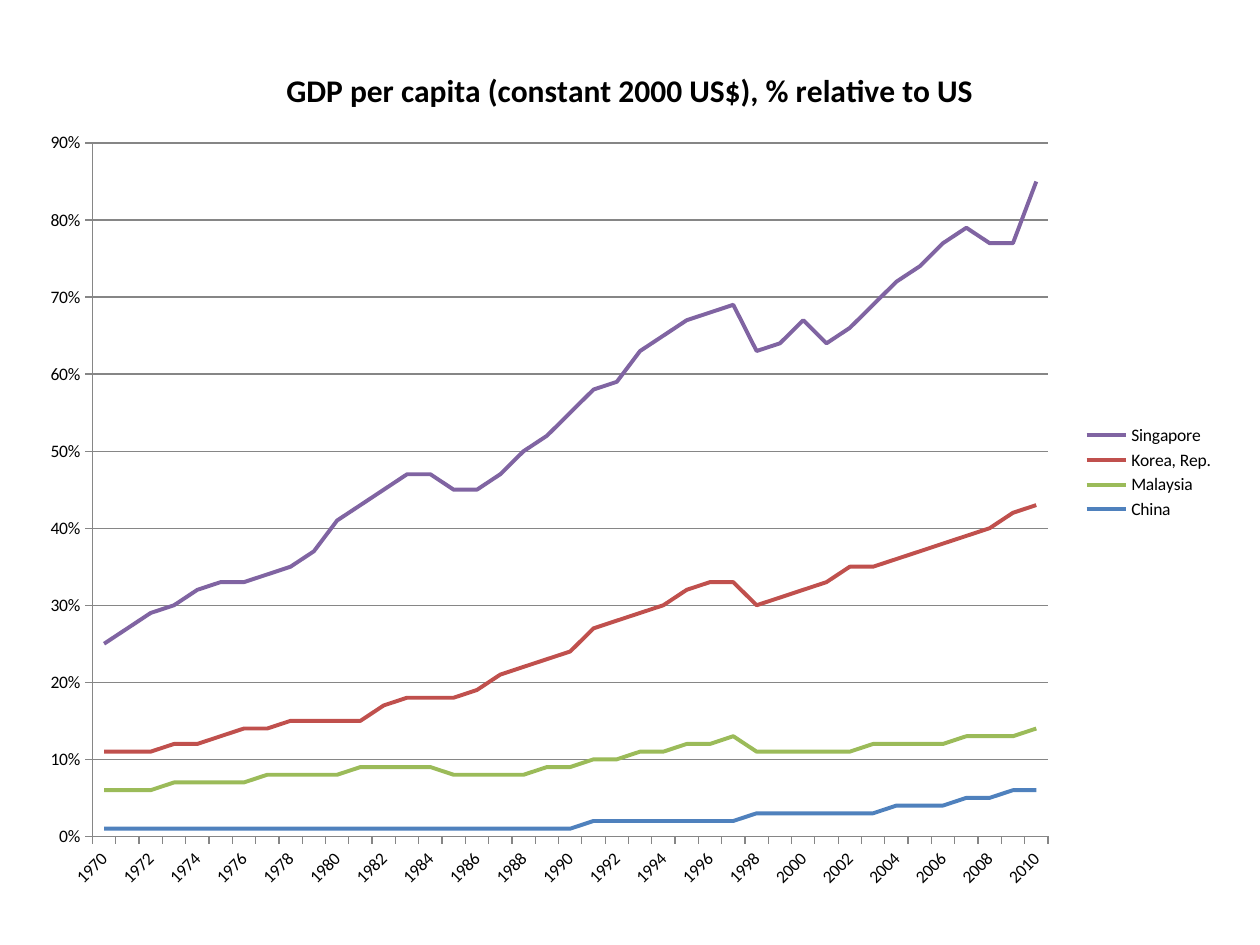
from lxml import etree
from pptx import Presentation
from pptx.chart.data import CategoryChartData
from pptx.dml.color import RGBColor
from pptx.enum.chart import XL_CHART_TYPE, XL_LEGEND_POSITION, XL_MARKER_STYLE, XL_TICK_MARK
from pptx.util import Inches, Pt

LINE_CHART = XL_CHART_TYPE.LINE
LEGEND_RIGHT = XL_LEGEND_POSITION.RIGHT
NO_MARKER = XL_MARKER_STYLE.NONE
TICK_OUTSIDE = XL_TICK_MARK.OUTSIDE
TICK_NONE = XL_TICK_MARK.NONE
CHART_NS = "http://schemas.openxmlformats.org/drawingml/2006/chart"

COLORS = {
    "text": "000000",
    "rule": "868686",
    "Singapore": "8064A2",
    "Korea, Rep.": "C0504D",
    "Malaysia": "9BBB59",
    "China": "4F81BD",
}

YEARS = range(1970, 2011)

# GDP per capita in whole percent of the US level, one value a year
PERCENT_OF_US = {
    "Singapore": [
        25, 27, 29, 30, 32, 33, 33, 34, 35, 37, 41, 43, 45, 47, 47, 45, 45, 47, 50, 52,
        55, 58, 59, 63, 65, 67, 68, 69, 63, 64, 67, 64, 66, 69, 72, 74, 77, 79, 77, 77, 85],
    "Korea, Rep.": [
        11, 11, 11, 12, 12, 13, 14, 14, 15, 15, 15, 15, 17, 18, 18, 18, 19, 21, 22, 23,
        24, 27, 28, 29, 30, 32, 33, 33, 30, 31, 32, 33, 35, 35, 36, 37, 38, 39, 40, 42, 43],
    "Malaysia": [
        6, 6, 6, 7, 7, 7, 7, 8, 8, 8, 8, 9, 9, 9, 9, 8, 8, 8, 8, 9,
        9, 10, 10, 11, 11, 12, 12, 13, 11, 11, 11, 11, 11, 12, 12, 12, 12, 13, 13, 13, 14],
    "China": [1] * 21 + [2] * 7 + [3] * 6 + [4] * 3 + [5] * 2 + [6] * 2,
}


def format_font(font, size=10, bold=False, color="text", name="Calibri"):
    font.name = name
    font.size = Pt(size)
    font.bold = bold
    font.color.rgb = RGBColor.from_string(COLORS[color])


def write_text(frame, text, **style):
    span = frame.paragraphs[0].add_run()
    span.text = text
    format_font(span.font, **style)


def chart_element(tag, value):
    element = etree.Element(f"{{{CHART_NS}}}{tag}")
    element.set("val", str(value))
    return element


class SlideBuilder:
    def __init__(self, deck):
        self.page = deck.slides.add_slide(deck.slide_layouts[6])

    def style_line(self, line, color, width):
        line.color.rgb = RGBColor.from_string(COLORS[color])
        line.width = Pt(width)

    def style_axis(self, axis):
        axis.major_tick_mark = TICK_OUTSIDE
        axis.minor_tick_mark = TICK_NONE
        format_font(axis.tick_labels.font)
        self.style_line(axis.format.line, "rule", 0.75)

    def place_plot(self, chart, **edges):
        # Fix the inner plot area as fractions of the chart
        plot_area = chart.plots[0]._element.getparent()
        for old in plot_area.findall(f"{{{CHART_NS}}}layout"):
            plot_area.remove(old)
        layout = etree.Element(f"{{{CHART_NS}}}layout")
        manual = etree.SubElement(layout, f"{{{CHART_NS}}}manualLayout")
        settings = {"layoutTarget": "inner", "xMode": "edge", "yMode": "edge", **edges}
        for tag, value in settings.items():
            manual.append(chart_element(tag, value))
        plot_area.insert(0, layout)

    def line_chart(self, title, categories, table, left, top, width, height):
        data = CategoryChartData(number_format="0%")
        data.categories = [str(category) for category in categories]
        for name, percents in table.items():
            data.add_series(name, [percent / 100 for percent in percents])
        chart = self.page.shapes.add_chart(
            LINE_CHART, Inches(left), Inches(top), Inches(width), Inches(height), data
        ).chart
        format_font(chart.font)

        # Title and legend
        write_text(chart.chart_title.text_frame, title, size=18, bold=True)
        chart.chart_title.include_in_layout = False
        chart.has_legend = True
        chart.legend.position = LEGEND_RIGHT
        chart.legend.include_in_layout = False
        format_font(chart.legend.font)

        # Value axis with gridlines
        values = chart.value_axis
        self.style_axis(values)
        values.minimum_scale, values.maximum_scale, values.major_unit = 0, 0.9, 0.1
        values.tick_labels.number_format = "0%"
        values.tick_labels.number_format_is_linked = False
        self.style_line(values.major_gridlines.format.line, "rule", 0.75)

        # Year axis: slanted labels, every second year
        years = chart.category_axis
        self.style_axis(years)
        body = years._element.txPr.bodyPr
        body.set("rot", "-2700000")
        body.set("vert", "horz")
        no_multi_level = years._element.find(f"{{{CHART_NS}}}noMultiLvlLbl")
        no_multi_level.addprevious(chart_element("tickLblSkip", 2))

        # One plain line a country
        chart.plots[0].vary_by_categories = False
        for series in chart.plots[0].series:
            series.smooth = False
            series.marker.style = NO_MARKER
            self.style_line(series.format.line, series.name, 2.25)
        return chart


def main():
    deck = Presentation()
    deck.slide_width, deck.slide_height = Inches(10), Inches(7.5)
    builder = SlideBuilder(deck)
    chart = builder.line_chart(
        "GDP per capita (constant 2000 US$), % relative to US",
        YEARS, PERCENT_OF_US, left=0.26, top=0.31, width=9.48, height=6.88)
    builder.place_plot(chart, x=0.05, y=0.12, w=0.8, h=0.8)
    deck.save("out.pptx")


if __name__ == "__main__":
    main()
